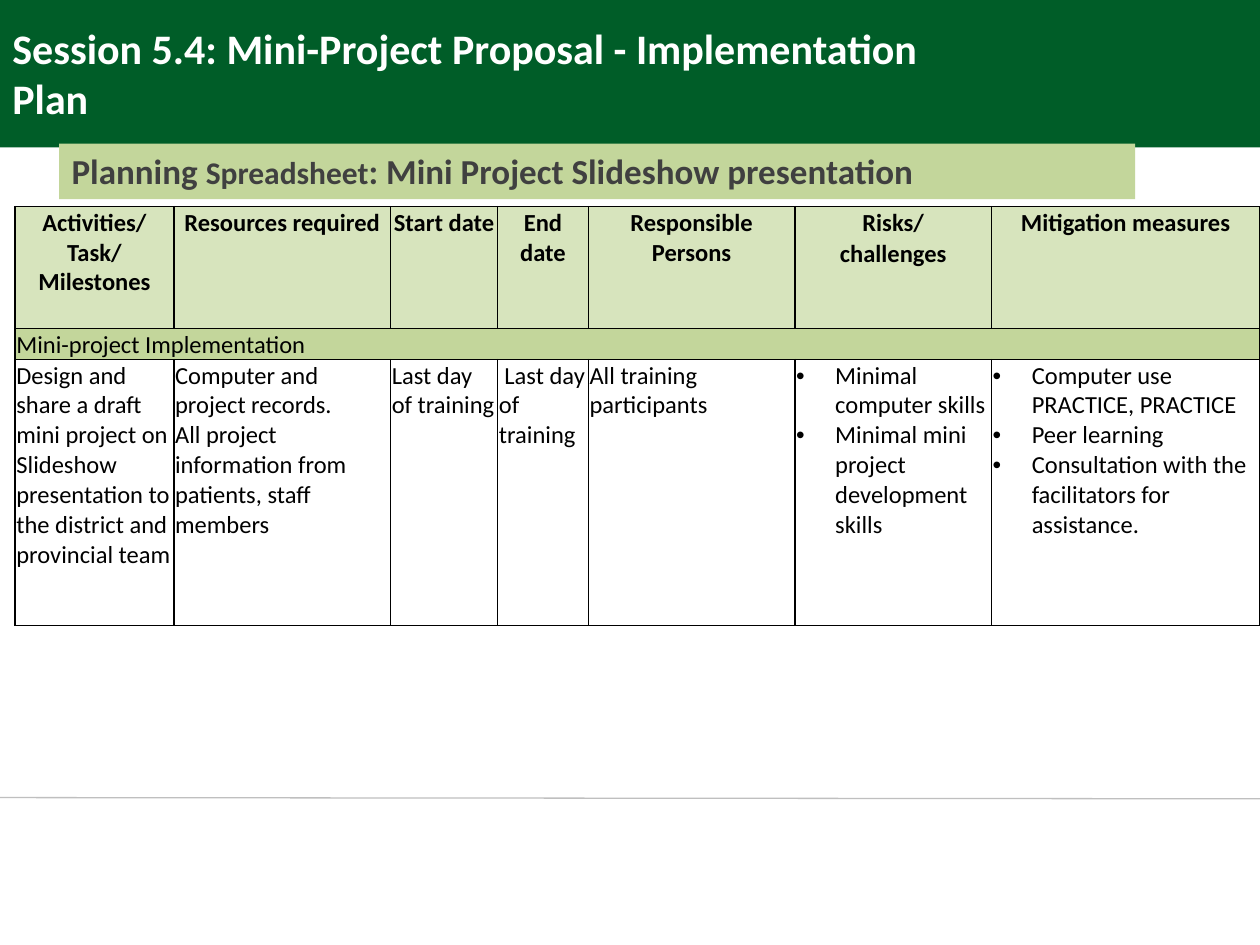
"""Build the mini-project implementation plan slide."""
from lxml import etree
from pptx import Presentation
from pptx import util as u
from pptx.dml.color import RGBColor
from pptx.enum import shapes, text
from pptx.oxml.ns import qn

GREEN = RGBColor(0x00, 0x5D, 0x28)
LEAF = RGBColor(0xC3, 0xD6, 0x9B)
PALE = RGBColor(0xD7, 0xE4, 0xBD)
GREY = RGBColor(0xBF, 0xBF, 0xBF)
DARK = RGBColor(0x40, 0x40, 0x40)
BLACK = RGBColor(0, 0, 0)
WHITE = RGBColor(0xFF, 0xFF, 0xFF)
INSET = 0.01
INDENT = 0.31
COLS = [1.26, 1.72, 0.85, 0.72, 1.64, 1.56, 2.13]
ROWS = [0.24, 0.71, 0.24, 2.11]
RISKS = 5

HEADER = [["Activities/Task/Milestones"], ["Resources required"], ["Start date"],
          ["End date"], ["Responsible", "Persons"], ["Risks/"], ["Mitigation measures"]]
PLAN = [
    ["Design and share a draft mini project on Slideshow presentation "
     "to the district and provincial team"],
    ["Computer and project records.",
     "All project information from patients, staff members"],
    ["Last day of training"],
    [" Last day of training"],
    ["All training participants"],
    ["Minimal computer skills", "Minimal mini project development skills"],
    ["Computer use PRACTICE, PRACTICE", "Peer learning",
     "Consultation with the facilitators for assistance."],
]


def write(tf, paragraphs, size=14, color=BLACK, bold=False, align=text.PP_ALIGN.LEFT,
          bullet=False):
    """Fill a text frame; a paragraph is a string or a list of (string, size) runs."""
    tf.word_wrap = True
    for i, runs in enumerate(paragraphs):
        p = tf.paragraphs[0] if i == 0 else tf.add_paragraph()
        p.alignment = align
        if bullet:
            pPr = p._p.get_or_add_pPr()
            pPr.set("marL", str(u.Inches(INDENT)))
            pPr.set("indent", str(-u.Inches(INDENT)))
            etree.SubElement(pPr, qn("a:buFont"), typeface="Arial")
            etree.SubElement(pPr, qn("a:buChar"), char="•")
        for words, points in [(runs, size)] if isinstance(runs, str) else runs:
            r = p.add_run()
            r.text = words
            r.font.name = "Calibri"
            r.font.size = u.Pt(points)
            r.font.bold = bold
            r.font.color.rgb = color


def border(cell, sides):
    """Draw thin black borders on the named sides of a table cell."""
    tcPr = cell._tc.get_or_add_tcPr()
    for side in "LRTB":
        ln = etree.SubElement(tcPr, qn(f"a:ln{side}"), w=str(u.Pt(1)))
        if side in sides:
            fill = etree.SubElement(ln, qn("a:solidFill"))
            etree.SubElement(fill, qn("a:srgbClr"), val=str(BLACK))
        else:
            etree.SubElement(ln, qn("a:noFill"))


prs = Presentation()
prs.slide_width, prs.slide_height = u.Inches(10), u.Inches(7.5)
s = prs.slides.add_slide(prs.slide_layouts[6])

bars = []
for box, color in [((0, 0, 10, 1.17), GREEN), ((0.47, 1.14, 8.54, 0.44), LEAF)]:
    sp = s.shapes.add_shape(shapes.MSO_SHAPE.RECTANGLE, *map(u.Inches, box))
    sp.shadow.inherit = False
    sp.fill.solid()
    sp.fill.fore_color.rgb = color
    sp.line.fill.background()
    bars.append(sp)
tf = bars[1].text_frame
tf.vertical_anchor = text.MSO_ANCHOR.TOP
write(tf, [[("Planning ", 20), ("Spreadsheet", 18),
            (": Mini Project Slideshow presentation", 20)]], color=DARK, bold=True)

rule = s.shapes.add_connector(shapes.MSO_CONNECTOR.STRAIGHT,
                              *map(u.Inches, (0, 6.33, 10, 6.34)))
rule.line.color.rgb = GREY
rule.line.width = u.Pt(0.75)
etree.SubElement(rule._element.spPr, qn("a:effectLst"))

table = s.shapes.add_table(len(ROWS), len(COLS), *map(
    u.Inches, (0.12, 1.64, sum(COLS), sum(ROWS)))).table
table.first_row = table.horz_banding = False
for col, width in zip(table.columns, COLS):
    col.width = u.Inches(width)
for row, height in zip(table.rows, ROWS):
    row.height = u.Inches(height)

for i, color in enumerate([PALE, PALE, LEAF, None]):
    for j in range(len(COLS)):
        cell = table.cell(i, j)
        cell.margin_left = cell.margin_right = cell.margin_top = u.Inches(INSET)
        cell.margin_bottom = 0
        border(cell, {0: "LRT", 1: "LRB"}.get(i, "LRTB") if j == RISKS else "LRTB")
        if color is None:
            cell.fill.background()
        else:
            cell.fill.solid()
            cell.fill.fore_color.rgb = color

for j, (heading, content) in enumerate(zip(HEADER, PLAN)):
    if j != RISKS:
        table.cell(0, j).merge(table.cell(1, j))
    write(table.cell(0, j).text_frame, heading, bold=True, align=text.PP_ALIGN.CENTER)
    write(table.cell(3, j).text_frame, content, bullet=j >= RISKS)
write(table.cell(1, RISKS).text_frame, ["challenges"], bold=True,
      align=text.PP_ALIGN.CENTER)
table.cell(2, 0).merge(table.cell(2, len(COLS) - 1))
write(table.cell(2, 0).text_frame, ["Mini-project Implementation"])

sp = s.shapes.add_textbox(*map(u.Inches, (0, 0.13, 7.72, 0.91)))
write(sp.text_frame, ["Session 5.4: Mini-Project Proposal - Implementation Plan"],
      size=24, color=WHITE, bold=True)

prs.save("out.pptx")
